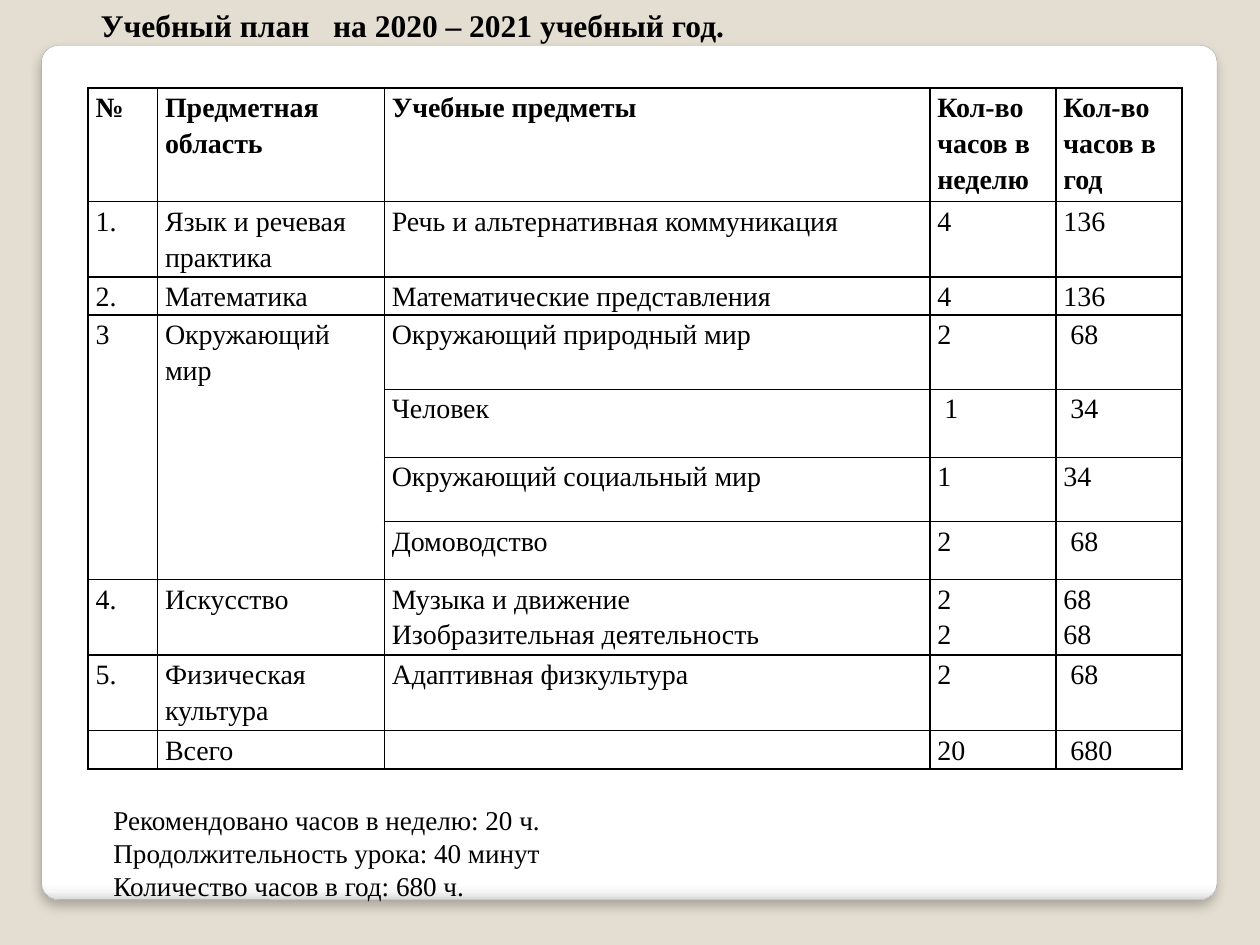
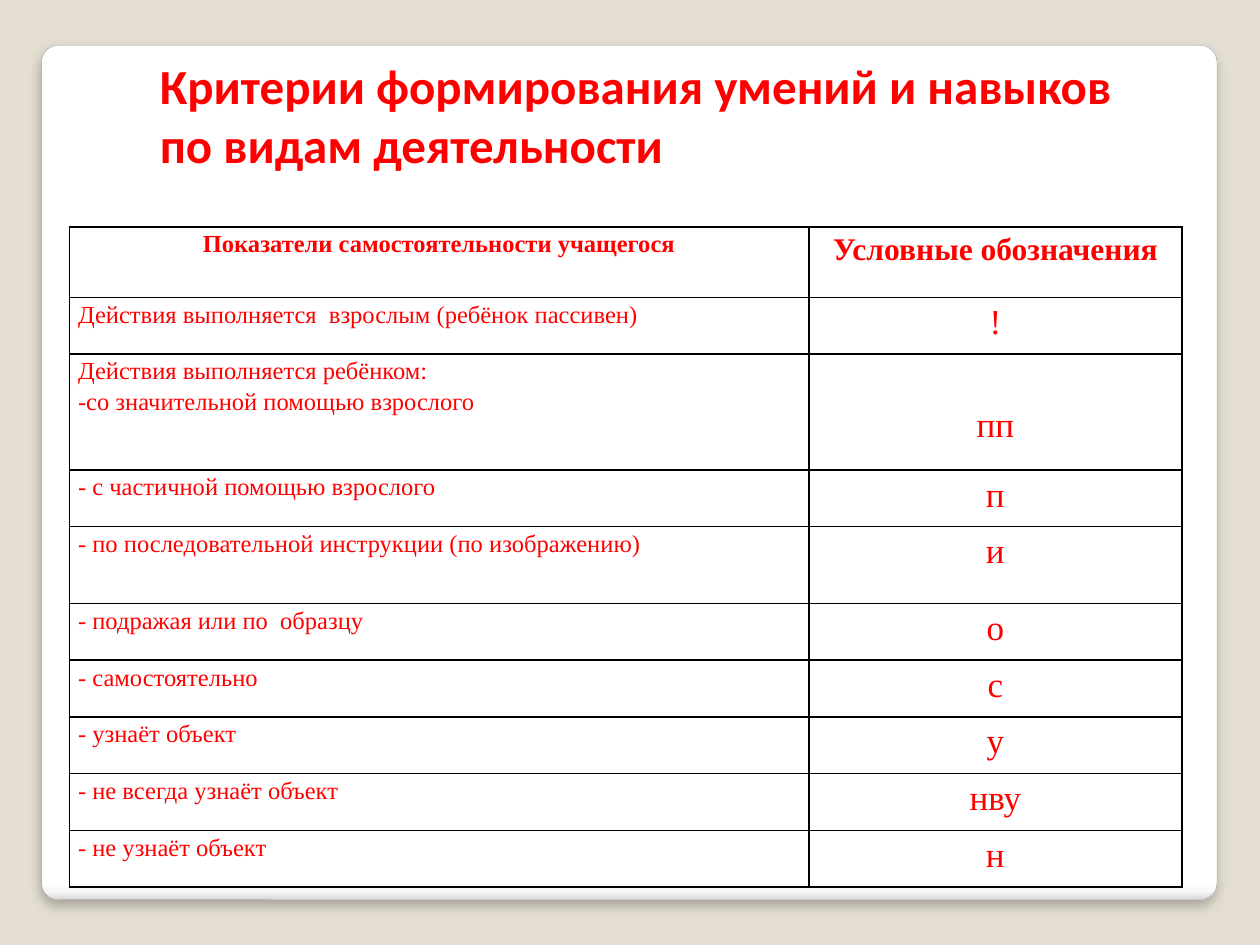
from pptx import Presentation
from pptx.dml.color import RGBColor
from pptx.enum.shapes import MSO_SHAPE as Shape
from pptx.enum.text import PP_ALIGN as Align
from pptx.oxml import parse_xml
from pptx.oxml.ns import nsdecls, qn
from pptx.util import Emu, Inches, Pt

SERIF, SANS = "Times New Roman", "Calibri"
BLACK, RED, WHITE, SAND, GREY = "000000", "FF0000", "FFFFFF", "E3DED1", "A4A4A4"
CARD_STOPS = [(0, WHITE), (98, WHITE), (99, "F7F7F7"), (100, "DADADA")]
LINE_SPACING = 1.15

PLAN_TITLE = "Учебный план   на 2020 – 2021 учебный год."
PLAN_COLUMNS = [0.55, 1.8, 4.33, 1, 1]
PLAN = [
    (0.9, "№", "Предметная область", "Учебные предметы", "Кол-во часов в неделю", "Кол-во часов в год"),
    (0.6, "1.", "Язык и речевая практика", "Речь и альтернативная коммуникация", "4", "136"),
    (0.3, "2.", "Математика", "Математические представления", "4", "136"),
    (0.59, "3", "Окружающий мир", "Окружающий природный мир", "2", " 68"),
    (0.54, "", "", "Человек", " 1", " 34"),
    (0.51, "", "", "Окружающий социальный мир", "1", "34"),
    (0.46, "", "", "Домоводство", "2", " 68"),
    (0.6, "4.", "Искусство", "Музыка и движение\nИзобразительная деятельность", "2\n2", "68\n68"),
    (0.6, "5.", "Физическая культура", "Адаптивная физкультура", "2", " 68"),
    (0.3, "", "Всего", "", "20", " 680"),
]
WORLD_ROWS = (3, 6)
PLAN_NOTES = """Рекомендовано часов в неделю: 20 ч.
Продолжительность урока: 40 минут
Количество часов в год: 680 ч."""

CRITERIA_TITLE = "Критерии формирования умений и навыков по видам деятельности"
CRITERIA_COLUMNS = [5.87, 2.96]
CRITERIA = [
    (0.56, "Показатели самостоятельности учащегося", "Условные обозначения"),
    (0.45, "Действия выполняется  взрослым (ребёнок пассивен)", "!"),
    (0.92, "Действия выполняется ребёнком:\n-со значительной помощью взрослого", "пп"),
    (0.45, "- с частичной помощью взрослого", "п"),
    (0.61, "- по последовательной инструкции (по изображению)", "и"),
    (0.45, "- подражая или по  образцу", "о"),
    (0.45, "- самостоятельно", "с"),
    (0.45, "- узнаёт объект", "у"),
    (0.45, "- не всегда узнаёт объект", "нву"),
    (0.45, "- не узнаёт объект", "н"),
]
HELP_ROW = 2


def rgb(code):
    return RGBColor.from_string(code)


def box(*lengths):
    return [Inches(length) for length in lengths]


def write(frame, text, size, color=BLACK, bold=False, font=SERIF, align=Align.LEFT, spacing=None):
    frame.word_wrap = True
    frame.text = text
    for paragraph in frame.paragraphs:
        paragraph.alignment = align
        paragraph.line_spacing = spacing
        face = paragraph.font
        face.name, face.size, face.bold = font, Pt(size), bold
        face.color.rgb = rgb(color)


def add_card_slide(deck):
    slide = deck.slides.add_slide(deck.slide_layouts[6])
    slide.background.fill.solid()
    slide.background.fill.fore_color.rgb = rgb(SAND)
    card = slide.shapes.add_shape(Shape.ROUNDED_RECTANGLE, *box(0.33, 0.36, 9.33, 6.78))
    card.adjustments[0] = 0.02
    card.line.color.rgb = rgb(GREY)
    card.line.width = Pt(0.16)
    card.shadow.inherit = False
    stops = "".join(f'<a:gs pos="{share * 1000}"><a:srgbClr val="{code}"/></a:gs>' for share, code in CARD_STOPS)
    properties = card._element.spPr
    properties.find(qn("a:prstGeom")).addnext(parse_xml(
        f'<a:gradFill {nsdecls("a")}><a:gsLst>{stops}</a:gsLst><a:lin ang="5400000" scaled="0"/></a:gradFill>'))
    properties.find(qn("a:effectLst")).append(parse_xml(
        f'<a:outerShdw {nsdecls("a")} blurRad="{Pt(6)}" dist="{Pt(4)}" dir="5400000" algn="t" rotWithShape="0">'
        f'<a:srgbClr val="{BLACK}"><a:alpha val="25000"/></a:srgbClr></a:outerShdw>'))
    return slide


def add_borders(cell):
    properties = cell._tc.get_or_add_tcPr()
    for side in "LRTB":
        properties.append(parse_xml(
            f'<a:ln{side} {nsdecls("a")} w="{Pt(1)}"><a:solidFill><a:srgbClr val="{BLACK}"/></a:solidFill></a:ln{side}>'))


def add_grid(slide, left, top, columns, rows, inset, style, fill=None):
    """Draw bordered rows of (height, *texts); style(row, column) gives the text settings."""
    heights = [row[0] for row in rows]
    table = slide.shapes.add_table(
        len(rows), len(columns), *box(left, top, sum(columns), sum(heights))).table
    table.first_row = table.horz_banding = False
    for column, width in zip(table.columns, columns):
        column.width = Inches(width)
    for r, (height, *texts) in enumerate(rows):
        table.rows[r].height = Inches(height)
        for c, text in enumerate(texts):
            cell = table.cell(r, c)
            cell.margin_left = cell.margin_right = Inches(inset)
            cell.margin_top = cell.margin_bottom = Emu(0)
            add_borders(cell)
            if fill:
                cell.fill.solid()
                cell.fill.fore_color.rgb = rgb(fill)
            else:
                cell.fill.background()
            if text:
                write(cell.text_frame, text, spacing=LINE_SPACING, **style(r, c))
    return table


def plan_style(row, column):
    return dict(size=16, bold=row == 0)


def criteria_style(row, column):
    sizes = (14, 18) if row == 0 else (14, 20)
    centred = row == 0 or column == 1
    return dict(size=sizes[column], color=RED, bold=row == 0, align=Align.CENTER if centred else Align.LEFT)


def build_plan(deck):
    slide = add_card_slide(deck)
    table = add_grid(slide, 0.7, 0.7, PLAN_COLUMNS, PLAN, 0.06, plan_style)
    first, last = WORLD_ROWS
    for column in (0, 1):
        table.cell(first, column).merge(table.cell(last, column))
    notes = slide.shapes.add_textbox(*box(0.7, 6.02, 5.08, 0.94)).text_frame
    notes.margin_left, notes.margin_top = box(0.2, 0.36)
    write(notes, PLAN_NOTES, 15.5)
    title = slide.shapes.add_textbox(*box(0.7, 0, 6.8, 0.4)).text_frame
    write(title, PLAN_TITLE, 18, bold=True)


def build_criteria(deck):
    slide = add_card_slide(deck)
    table = add_grid(slide, 0.55, 1.8, CRITERIA_COLUMNS, CRITERIA, 0.07, criteria_style, WHITE)
    table.cell(HELP_ROW, 1).margin_top = Inches(0.37)
    title = slide.shapes.add_textbox(*box(1.17, 0.39, 7.97, 1.35))
    title.fill.solid()
    title.fill.fore_color.rgb = rgb(WHITE)
    write(title.text_frame, CRITERIA_TITLE, 28, RED, bold=True, font=SANS)


def main():
    deck = Presentation()
    deck.slide_width, deck.slide_height = box(10, 7.5)
    build_plan(deck)
    build_criteria(deck)
    deck.save("out.pptx")


if __name__ == "__main__":
    main()
